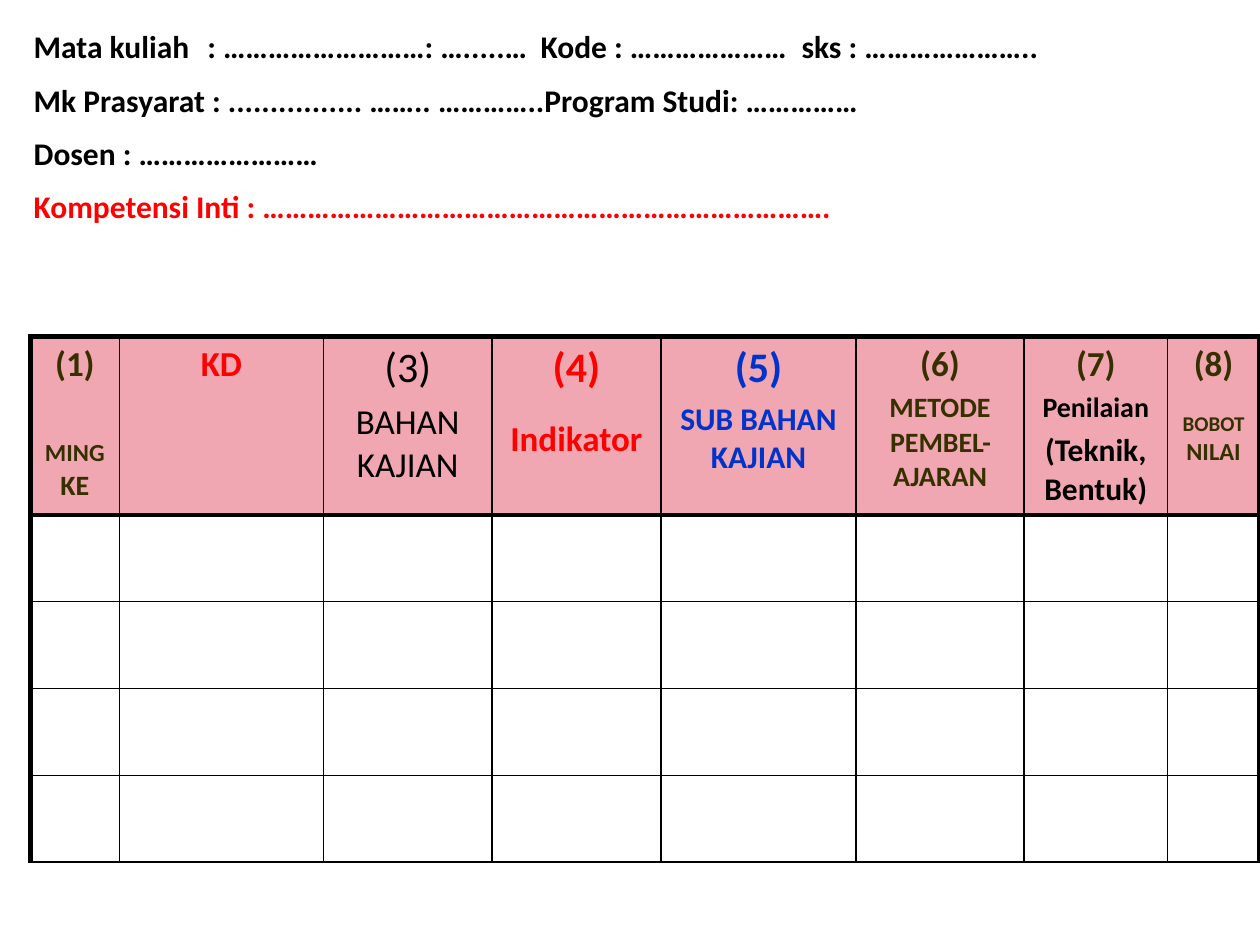
from lxml import etree
from pptx import Presentation
from pptx.dml.color import RGBColor
from pptx.enum.text import MSO_AUTO_SIZE, PP_ALIGN
from pptx.oxml.ns import qn
from pptx.util import Cm, Pt

CENTER = PP_ALIGN.CENTER
GROW = MSO_AUTO_SIZE.SHAPE_TO_FIT_TEXT
BLANK = 6
COLORS = {"black": "000000", "red": "FF0000", "blue": "0033CC",
          "olive": "363000", "pink": "F0A7B1"}
THIN, THICK = 1, 3


def add_text(p, text, size, color, bold=True):
    r = p.add_run()
    r.text = text
    formats = {"name": "Calibri", "size": Pt(size), "bold": bold}
    for key, value in formats.items():
        setattr(r.font, key, value)
    r.font.color.rgb = RGBColor.from_string(COLORS[color])


def set_border(cell, side, width):
    ln = etree.SubElement(cell._tc.get_or_add_tcPr(), qn("a:" + side),
                          w=str(Pt(width)))
    fill = etree.SubElement(ln, qn("a:solidFill"))
    etree.SubElement(fill, qn("a:srgbClr"), val=COLORS["black"])


prs = Presentation()
prs.slide_width, prs.slide_height = Cm(25.4), Cm(19.05)
s = prs.slides.add_slide(prs.slide_layouts[BLANK])

# Syllabus table
col_widths = [1.8, 4.11, 3.4, 3.4, 3.94, 3.38, 2.9, 1.85]
row_heights = [3.07] + [1.75] * 4
last_col = len(col_widths) - 1
table = s.shapes.add_table(len(row_heights), len(col_widths), Cm(0.61), Cm(6.78),
                           Cm(sum(col_widths)), Cm(sum(row_heights))).table
table.first_row = table.horz_banding = False
for col, width in zip(table.columns, col_widths):
    col.width = Cm(width)
for row, height in zip(table.rows, row_heights):
    row.height = Cm(height)

# Borders and fills: thick outside and around the header row
for i in range(len(row_heights)):
    for j in range(len(col_widths)):
        cell = table.cell(i, j)
        set_border(cell, "lnL", THICK if j == 0 else THIN)
        set_border(cell, "lnR", THICK if j == last_col else THIN)
        set_border(cell, "lnT", THICK if i <= 1 else THIN)
        set_border(cell, "lnB", THICK if i == 0 else THIN)
        if i == 0:
            cell.fill.solid()
            cell.fill.fore_color.rgb = RGBColor.from_string(COLORS["pink"])
        else:
            cell.fill.background()

# Header cells: paragraphs of (space before, runs of (text, size, color, bold))
headers = [
    [(4, [("(1)", 20, "olive")]),
     (28, [("MING", 14, "olive"), (" KE", 16, "olive")])],
    [(4, [("KD", 20, "red")])],
    [(4.8, [("(3)", 24, "black", False)]),
     (4, [("BAHAN KAJIAN", 20, "black", False)])],
    [(4.8, [("(4)", 24, "red")]), (14, [("Indikator", 20, "red")])],
    [(4.8, [("(5)", 24, "blue")]), (3.6, [("SUB BAHAN KAJIAN", 18, "blue")])],
    [(4, [("(6)", 20, "olive")]),
     (3.2, [("METODE PEMBEL-AJARAN", 16, "olive")])],
    [(4, [("(7)", 20, "olive")]), (3.2, [("Penilaian", 16, "black")]),
     (3.6, [("(Teknik, Bentuk)", 18, "black")])],
    [(4, [("(8)", 20, "olive")]),
     (15, [("BOBOT ", 12, "olive"), ("NILAI", 14, "olive")])],
]
for j, paragraphs in enumerate(headers):
    tf = table.cell(0, j).text_frame
    for k, (before, runs) in enumerate(paragraphs):
        p = tf.add_paragraph() if k else tf.paragraphs[0]
        p.alignment = CENTER
        p.space_before = Pt(before)
        for run in runs:
            add_text(p, *run)

# Course details
sp = s.shapes.add_textbox(Cm(0.43), Cm(0.43), Cm(24.33), Cm(4.5))
tf = sp.text_frame
tf.word_wrap = True
tf.auto_size = GROW
details = [
    ("Mata kuliah\t: ………………………: ….....…\tKode : …………………\tsks : …………………..", "black"),
    ("Mk Prasyarat : ................ …….. …………..Program Studi: ……………", "black"),
    ("Dosen : ……………………", "black"),
    ("Kompetensi Inti : ………………………………………………………………….", "red"),
]
for k, (text, color) in enumerate(details):
    p = tf.add_paragraph() if k else tf.paragraphs[0]
    p.space_before = Pt(8.7)
    add_text(p, text, 18, color)

# Tab stops that line up the fields of the first line
tabs = etree.SubElement(tf.paragraphs[0]._p.get_or_add_pPr(), qn("a:tabLst"))
for pos in (3.5, 10.22, 15.48):
    etree.SubElement(tabs, qn("a:tab"), pos=str(Cm(pos)), algn="l")

prs.save("out.pptx")
